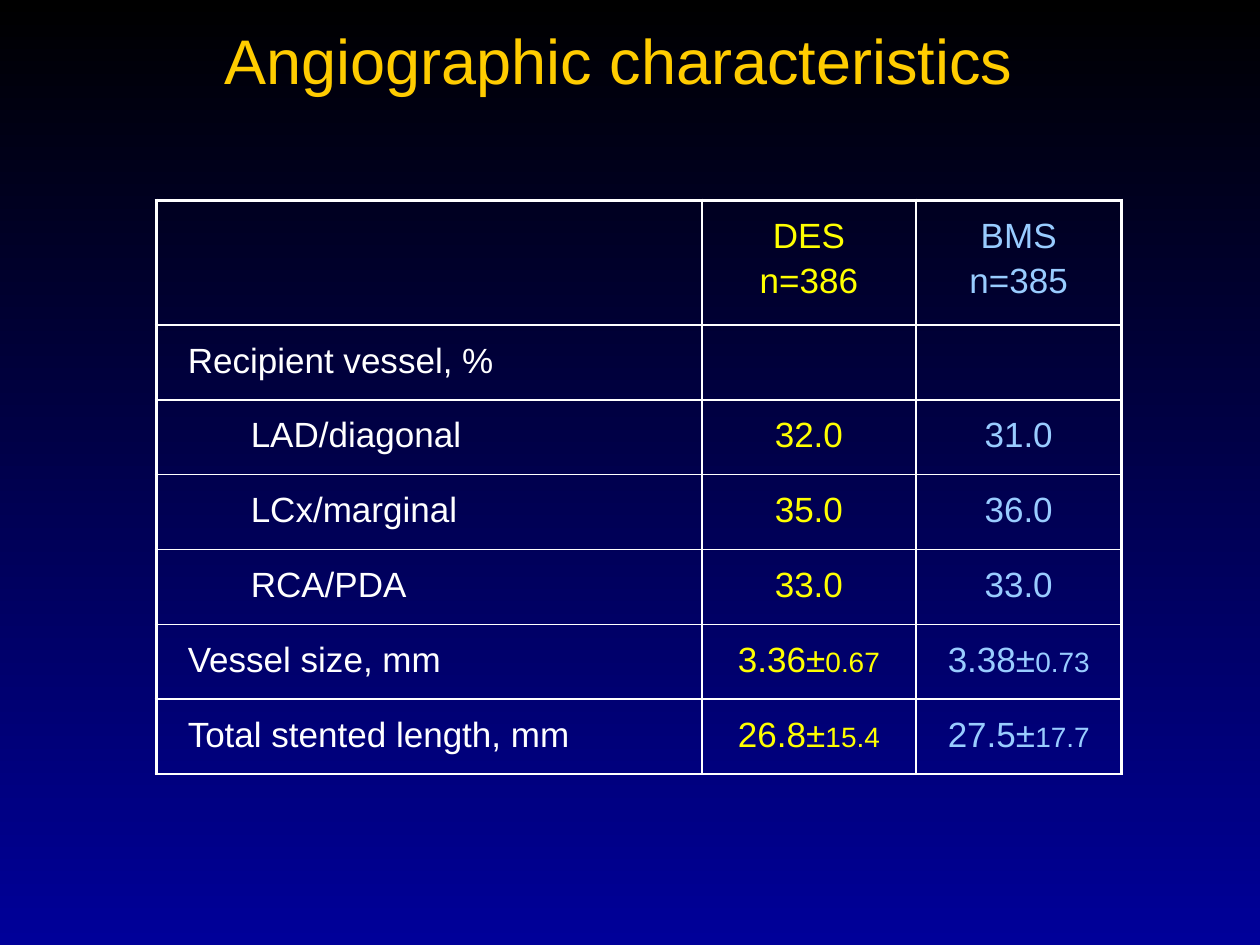
from dataclasses import dataclass

from lxml.etree import SubElement
from pptx import Presentation
from pptx.dml.color import RGBColor
from pptx.enum.text import MSO_ANCHOR, PP_ALIGN
from pptx.oxml.ns import qn
from pptx.util import Pt

PX = 914400 // 100  # 100 px to the inch


@dataclass(frozen=True)
class Theme:
    font: str = "Arial"
    sky_top: str = "000000"
    sky_bottom: str = "000099"
    title: str = "FFCC00"
    label: str = "FFFFFF"
    des: str = "FFFF00"
    bms: str = "99CCFF"
    rule: str = "FFFFFF"
    title_size: int = 36
    body_size: int = 20
    deviation_size: int = 16
    outer_rule: float = 2.25
    inner_rule: float = 1


def apply(target, values):
    for name, value in values.items():
        setattr(target, name, value)


class SlideBuilder:
    def __init__(self, slide, theme):
        self.slide = slide
        self.theme = theme

    def background(self):
        fill = self.slide.background.fill
        fill.gradient()
        fill.gradient_angle = 270
        colours = (self.theme.sky_top, self.theme.sky_bottom)
        for stop, position, colour in zip(fill.gradient_stops, (0, 1), colours):
            stop.position = position
            stop.color.rgb = RGBColor.from_string(colour)

    def run(self, paragraph, text, size, colour):
        run = paragraph.add_run()
        run.text = text
        apply(run.font, {"name": self.theme.font, "size": Pt(size)})
        run.font.color.rgb = RGBColor.from_string(colour)

    def title(self, text, left, top, width, height):
        box = self.slide.shapes.add_textbox(left * PX, top * PX, width * PX, height * PX)
        frame = box.text_frame
        apply(frame, {"word_wrap": True, "vertical_anchor": MSO_ANCHOR.MIDDLE})
        heading = frame.paragraphs[0]
        heading.alignment = PP_ALIGN.CENTER
        self.run(heading, text, self.theme.title_size, self.theme.title)

    def borders(self, cell, widths):
        properties = cell._tc.get_or_add_tcPr()
        for side, width in widths.items():
            line = SubElement(properties, qn(f"a:ln{side}"), w=str(Pt(width)))
            solid = SubElement(line, qn("a:solidFill"))
            SubElement(solid, qn("a:srgbClr"), val=self.theme.rule)

    def cell_text(self, cell, text, colour, alignment, indent):
        frame = cell.text_frame
        for index, line in enumerate(text.split("\n")):
            paragraph = frame.add_paragraph() if index else frame.paragraphs[0]
            paragraph.alignment = alignment
            if index:
                paragraph.space_before = Pt(3.5)
            if indent:
                paragraph._p.get_or_add_pPr().set("indent", str(indent * PX))
            # The deviation after ± is set smaller than the mean
            mean, sign, deviation = line.partition("±")
            self.run(paragraph, mean + sign, self.theme.body_size, colour)
            if deviation:
                self.run(paragraph, deviation, self.theme.deviation_size, colour)

    def table(self, rows, left, top, widths, heights, indented):
        theme = self.theme
        frame = self.slide.shapes.add_table(
            len(rows), len(widths), left * PX, top * PX, sum(widths) * PX, sum(heights) * PX)
        table = frame.table
        apply(table, {"first_row": False, "horz_banding": False})
        for column, width in zip(table.columns, widths):
            column.width = width * PX
        for row, height in zip(table.rows, heights):
            row.height = height * PX

        colours = (theme.label, theme.des, theme.bms)
        last_column = len(widths) - 1
        outer, inner = theme.outer_rule, theme.inner_rule
        margins = {"margin_left": 25 * PX, "margin_right": 25 * PX,
                   "margin_top": 13 * PX, "margin_bottom": 13 * PX}
        for r, values in enumerate(rows):
            for c, text in enumerate(values):
                cell = table.cell(r, c)
                apply(cell, margins)
                self.borders(cell, {
                    "L": outer if c == 0 else inner,
                    "R": outer if c == last_column else inner,
                    "T": outer if r == 0 else inner,
                    "B": inner,
                })
                cell.fill.background()
                if text:
                    alignment = PP_ALIGN.CENTER if c else PP_ALIGN.LEFT
                    indent = 50 if c == 0 and text in indented else 0
                    self.cell_text(cell, text, colours[c], alignment, indent)


def main():
    presentation = Presentation()
    apply(presentation, {"slide_width": 1000 * PX, "slide_height": 750 * PX})
    slide = presentation.slides.add_slide(presentation.slide_layouts[6])
    builder = SlideBuilder(slide, Theme())

    # Backdrop and heading
    builder.background()
    builder.title("Angiographic characteristics", 121, 10, 740, 74)

    # Comparison of the two stent groups
    vessels = [
        ("LAD/diagonal", "32.0", "31.0"),
        ("LCx/marginal", "35.0", "36.0"),
        ("RCA/PDA", "33.0", "33.0"),
    ]
    characteristics = [
        ("", "DES\nn=386", "BMS\nn=385"),
        ("Recipient vessel, %", "", ""),
        *vessels,
        ("Vessel size, mm", "3.36±0.67", "3.38±0.73"),
        ("Total stented length, mm", "26.8±15.4", "27.5±17.7"),
    ]
    heights = [99] + [59] * (len(characteristics) - 1)
    builder.table(characteristics, 124, 159, (433, 170, 163), heights,
                  indented={vessel[0] for vessel in vessels})

    presentation.save("out.pptx")


if __name__ == "__main__":
    main()
